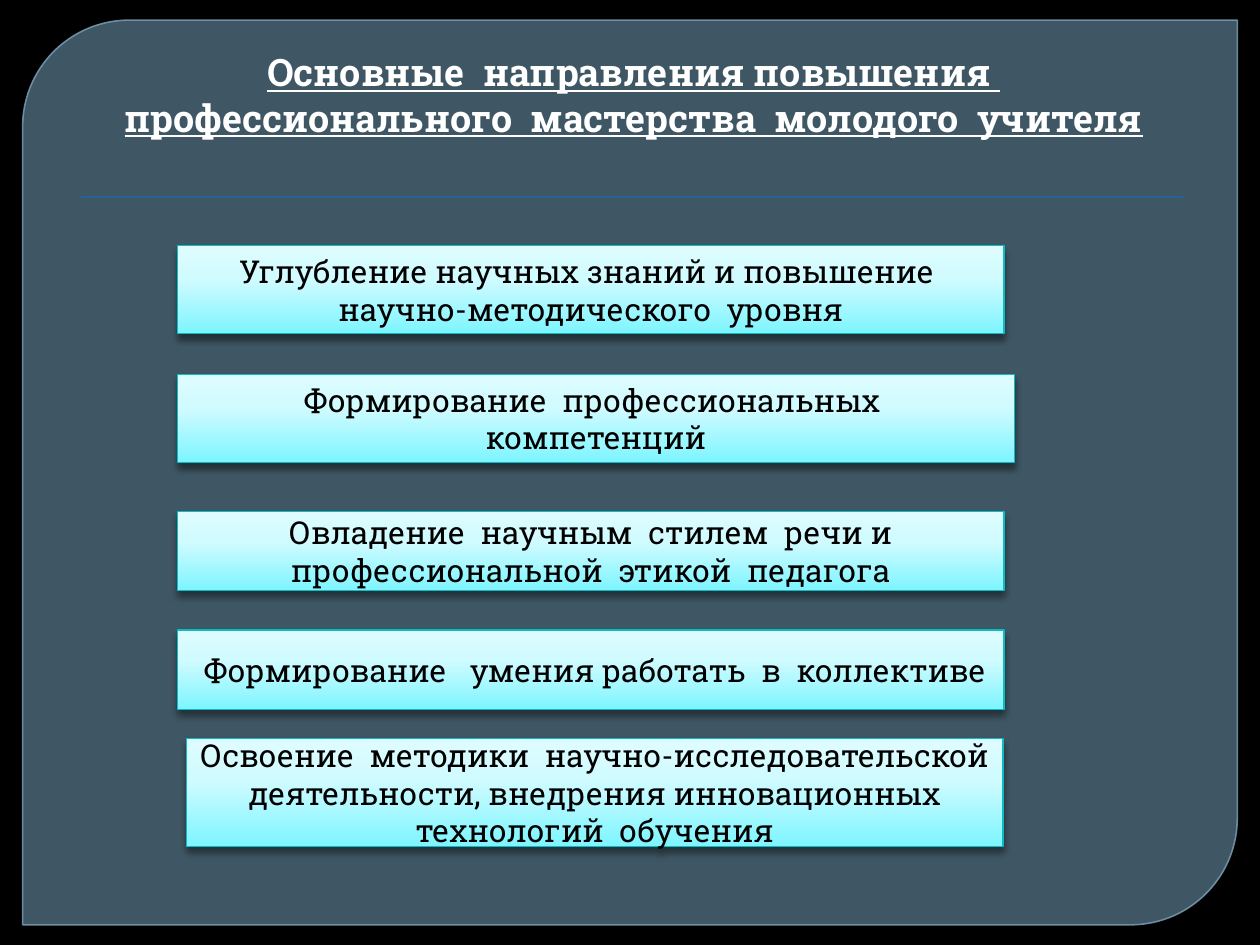
"""Build a slide listing the main ways a young teacher's skill can grow."""
from pptx import Presentation
from pptx import util as u
from pptx.dml.color import RGBColor
from pptx.enum import shapes, text
from pptx.oxml import ns, parse_xml

BLACK = RGBColor(0x00, 0x00, 0x00)
WHITE = RGBColor(0xFF, 0xFF, 0xFF)
SLATE = RGBColor(0x61, 0x86, 0x9C)
EDGE = RGBColor(0x77, 0x9B, 0xB2)
BLUE = RGBColor(0x0F, 0x6F, 0xC6)
TEAL = RGBColor(0x0A, 0xBD, 0xC5)
AQUA = RGBColor(0x7D, 0xF5, 0xFF)
PALE = RGBColor(0xD0, 0xFB, 0xFF)
MIST = RGBColor(0xDE, 0xFC, 0xFF)
FONT = "Roboto Slab"
SPACE = ns.nsdecls("a")

deck = Presentation()
deck.slide_width, deck.slide_height = u.Inches(10), u.Inches(7.5)
COL, ROW = deck.slide_width / 100, deck.slide_height / 100
slide = deck.slides.add_slide(deck.slide_layouts[5])
slide.background.fill.solid()
slide.background.fill.fore_color.rgb = BLACK


def draw(kind, left, top, wide, high, edge=None, thick=0.75, shade=None):
    shape = slide.shapes.add_shape(
        kind, u.Emu(int(left * COL)), u.Emu(int(top * ROW)),
        u.Emu(int(wide * COL)), u.Emu(int(high * ROW)))
    if edge is None:
        shape.line.fill.background()
    else:
        shape.line.color.rgb = edge
        shape.line.width = u.Pt(thick)
    shape.shadow.inherit = False
    if shade:
        alpha, blur, dist = shade
        shape.element.spPr.find(ns.qn("a:effectLst")).append(parse_xml(
            f'<a:outerShdw {SPACE} blurRad="{u.Pt(blur)}" dist="{u.Pt(dist)}" '
            f'dir="5400000" algn="ctr" rotWithShape="0"><a:srgbClr val="{BLACK}">'
            f'<a:alpha val="{alpha * 1000}"/></a:srgbClr></a:outerShdw>'))
    return shape


def write(shape, words, size, color, anchor, bold=False, under=False):
    frame = shape.text_frame
    frame.word_wrap = True
    frame.auto_size = text.MSO_AUTO_SIZE.NONE
    frame.vertical_anchor = anchor
    para = frame.paragraphs[0]
    para.alignment = text.PP_ALIGN.CENTER
    run = para.add_run()
    run.text = words
    font = run.font
    font.name, font.size, font.color.rgb = FONT, u.Pt(size), color
    font.bold, font.underline = bold, under


panel = draw(shapes.MSO_SHAPE.ROUND_2_DIAG_RECTANGLE, 1.8, 2.13, 96.4, 95.73, EDGE, 0.87)
panel.adjustments[0], panel.adjustments[1] = 0.118, 0
panel.fill.solid()
panel.fill.fore_color.rgb = SLATE
tints = panel.element.spPr.iter(ns.qn("a:srgbClr"))
for tint, alpha in zip(list(tints), (65, 88)):
    tint.append(parse_xml(f'<a:alpha {SPACE} val="{alpha * 1000}"/>'))

rule = draw(shapes.MSO_SHAPE.RECTANGLE, 6.4, 20.8, 87.5, 0.13, shade=(75, 1, 1))
rule.fill.solid()
rule.fill.fore_color.rgb = BLUE

title = slide.shapes.title
title.left, title.top = int(5 * COL), int(3.73 * ROW)
title.width, title.height = int(90 * COL), int(16.67 * ROW)
title.element.getparent().append(title.element)
write(title, "Основные  направления повышения  профессионального  мастерства  молодого  учителя",
      21.6, WHITE, text.MSO_ANCHOR.BOTTOM, bold=True, under=True)
title.text_frame.margin_bottom = int(5.6 * ROW)
title.text_frame.paragraphs[0].runs[0].font.language_id = None
title.text_frame.paragraphs[0]._p.get_or_add_pPr().set("marL", str(int(0.6 * COL)))

goals = [
    (14.1, 26, 65.6, 9.33, "Углубление научных знаний и повышение  научно-методического  уровня"),
    (14.1, 39.6, 66.4, 9.33, "Формирование  профессиональных  компетенций"),
    (14.1, 54.13, 65.6, 8.4, "Овладение  научным  стилем  речи и профессиональной  этикой  педагога"),
    (14.1, 66.67, 65.6, 8.4, " Формирование   умения работать  в  коллективе"),
    (14.8, 78.13, 64.8, 11.47, "Освоение  методики  научно-исследовательской  деятельности, "
                               "внедрения инновационных  технологий  обучения"),
]
for left, top, wide, high, words in goals:
    box = draw(shapes.MSO_SHAPE.RECTANGLE, left, top, wide, high, TEAL, shade=(43, 4, 3))
    box.fill.gradient()
    box.fill.gradient_angle = 90
    stops = box.element.spPr.find(".//" + ns.qn("a:gsLst"))
    stops.clear()
    for place, color in ((0, AQUA), (62, PALE), (100, MIST)):
        stops.append(parse_xml(
            f'<a:gs {SPACE} pos="{place * 1000}"><a:srgbClr val="{color}"/></a:gs>'))
    write(box, words, 18, BLACK, text.MSO_ANCHOR.MIDDLE)

deck.save("out.pptx")
